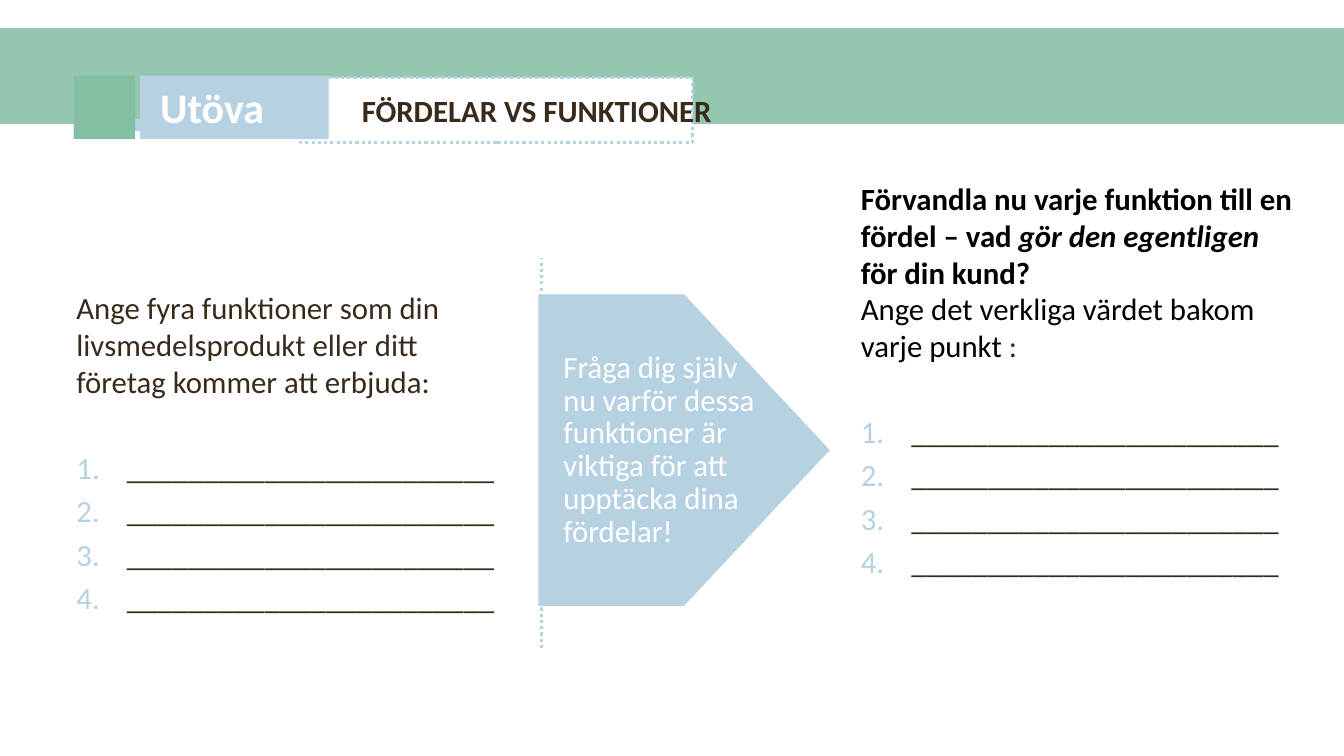
import dataclasses

import pptx
import pptx.dml.color
import pptx.enum.dml
import pptx.enum.shapes
import pptx.enum.text
import pptx.oxml
import pptx.oxml.ns
import pptx.util
from pptx.util import Inches

RECT = pptx.enum.shapes.MSO_SHAPE.RECTANGLE
PENTAGON = pptx.enum.shapes.MSO_SHAPE.PENTAGON
ANCHOR = pptx.enum.text.MSO_ANCHOR


@dataclasses.dataclass(frozen=True)
class Theme:
    font: str = "Calibri"
    band: str = "94C7B0"
    square: str = "84BFA4"
    blue: str = "B6D1E1"
    brown: str = "382B1B"
    black: str = "000000"
    white: str = "FFFFFF"
    label: int = 30
    body: int = 22
    leading: float = 23.4
    item_gap: float = 4.4
    list_gap: int = 35
    dotted: float = 2.25


THEME = Theme()


def rgb(color):
    return pptx.dml.color.RGBColor.from_string(color)


def dot_line(line):
    line.color.rgb = rgb(THEME.blue)
    line.width = pptx.util.Pt(THEME.dotted)
    line.dash_style = pptx.enum.dml.MSO_LINE.ROUND_DOT


def add_block(slide, box, fill, kind=RECT, dotted=False):
    sp = slide.shapes.add_shape(kind, *map(Inches, box))
    sp.shadow.inherit = False
    sp.fill.solid()
    sp.fill.fore_color.rgb = rgb(fill)
    if dotted:
        dot_line(sp.line)
    else:
        sp.line.fill.background()
    return sp


def add_text(slide, box, anchor=ANCHOR.TOP):
    tf = slide.shapes.add_textbox(*map(Inches, box)).text_frame
    tf.word_wrap = True
    tf.vertical_anchor = anchor
    return tf


def add_run(p, text, color, **formats):
    r = p.add_run()
    r.text = text
    values = {"name": THEME.font, "size": pptx.util.Pt(THEME.body), **formats}
    for name, value in values.items():
        setattr(r.font, name, value)
    r.font.color.rgb = rgb(color)


def number_paragraph(p):
    pPr = p._p.get_or_add_pPr()
    pPr.set("marL", str(Inches(0.5)))
    pPr.set("indent", str(-Inches(0.5)))
    ns = pptx.oxml.ns.nsdecls("a")
    for xml in (
        f'<a:buClr {ns}><a:srgbClr val="{THEME.blue}"/></a:buClr>',
        f'<a:buFont {ns} typeface="{THEME.font}"/>',
        f'<a:buAutoNum {ns} type="arabicPeriod"/>',
    ):
        pPr.append(pptx.oxml.parse_xml(xml))


def add_header(slide, box):
    x, y, w, h = box
    # Green band and the strip behind the label
    add_block(slide, box, THEME.band)
    add_block(slide, (x + 0.85, y + 0.9, 1.84, 0.12), THEME.blue)
    # Title frame, label and square
    add_block(slide, (x + 2.98, y + 0.49, 3.89, 0.64), THEME.white, dotted=True)
    add_block(slide, (x + 1.39, y + 0.47, 1.87, 0.63), THEME.blue)
    add_block(slide, (x + 0.73, y + 0.47, 0.61, 0.63), THEME.square)
    # Label and title text
    p = add_text(slide, (x + 1.49, y + 0.66, 2.29, 0.42), ANCHOR.BOTTOM).paragraphs[0]
    p.line_spacing = 1.5
    add_run(p, "Utöva", THEME.white, size=pptx.util.Pt(THEME.label), bold=True)
    p = add_text(slide, (x + 3.49, y + 0.62, 5.97, 0.46)).paragraphs[0]
    p.line_spacing = pptx.util.Pt(THEME.leading)
    add_run(p, "FÖRDELAR VS FUNKTIONER", THEME.brown, bold=True)


def add_question_list(slide, box, intro, count=4):
    """Intro lines of (text, color, formats) runs, then numbered blanks."""
    tf = add_text(slide, box)
    p = tf.paragraphs[0]
    for i, line in enumerate(intro):
        if i:
            p.add_line_break()
        for text, color, formats in line:
            add_run(p, text, color, **formats)
    # Blanks to fill in
    for i in range(count):
        p = tf.add_paragraph()
        number_paragraph(p)
        p.space_before = pptx.util.Pt(THEME.item_gap if i else THEME.list_gap)
        add_run(p, "_" * 24, THEME.brown)


def add_divider(slide, box):
    x, y, w, h = box
    # Dotted divider
    straight = pptx.enum.shapes.MSO_CONNECTOR.STRAIGHT
    line = slide.shapes.add_connector(
        straight, *map(Inches, (x + 0.03, y + 3.51, x + 0.03, y - 0.36)))
    line._element.spPr.append(
        pptx.oxml.parse_xml(f'<a:effectLst {pptx.oxml.ns.nsdecls("a")}/>'))
    dot_line(line.line)
    # Arrow and its text
    add_block(slide, box, THEME.blue, PENTAGON)
    p = add_text(slide, (x + 0.15, y + 0.52, 2.27, 2.04)).paragraphs[0]
    p.line_spacing = pptx.util.Pt(THEME.leading)
    add_run(p, "Fråga dig själv nu varför dessa funktioner är viktiga "
               "för att upptäcka dina fördelar!", THEME.white)


def main():
    prs = pptx.Presentation()
    prs.slide_width, prs.slide_height = Inches(13.33), Inches(7.5)
    slide = prs.slides.add_slide(prs.slide_layouts[6])

    add_header(slide, (0, 0.28, 13.33, 0.95))
    # Features
    add_question_list(slide, (0.66, 2.82, 4.5, 3.76), [
        [("Ange fyra funktioner som din livsmedelsprodukt eller ditt "
          "företag kommer att erbjuda:", THEME.brown, {})],
    ])
    add_divider(slide, (5.34, 2.92, 2.89, 3.09))
    # Benefits
    add_question_list(slide, (8.44, 1.73, 4.5, 4.28), [
        [("Förvandla nu varje funktion till en fördel – vad ", THEME.black, {"bold": True}),
         ("gör den egentligen ", THEME.black, {"bold": True, "italic": True}),
         ("för din kund?", THEME.black, {"bold": True})],
        [("Ange det verkliga värdet bakom varje punkt ", THEME.black, {}),
         (":", THEME.brown, {})],
    ])
    prs.save("out.pptx")


if __name__ == "__main__":
    main()
